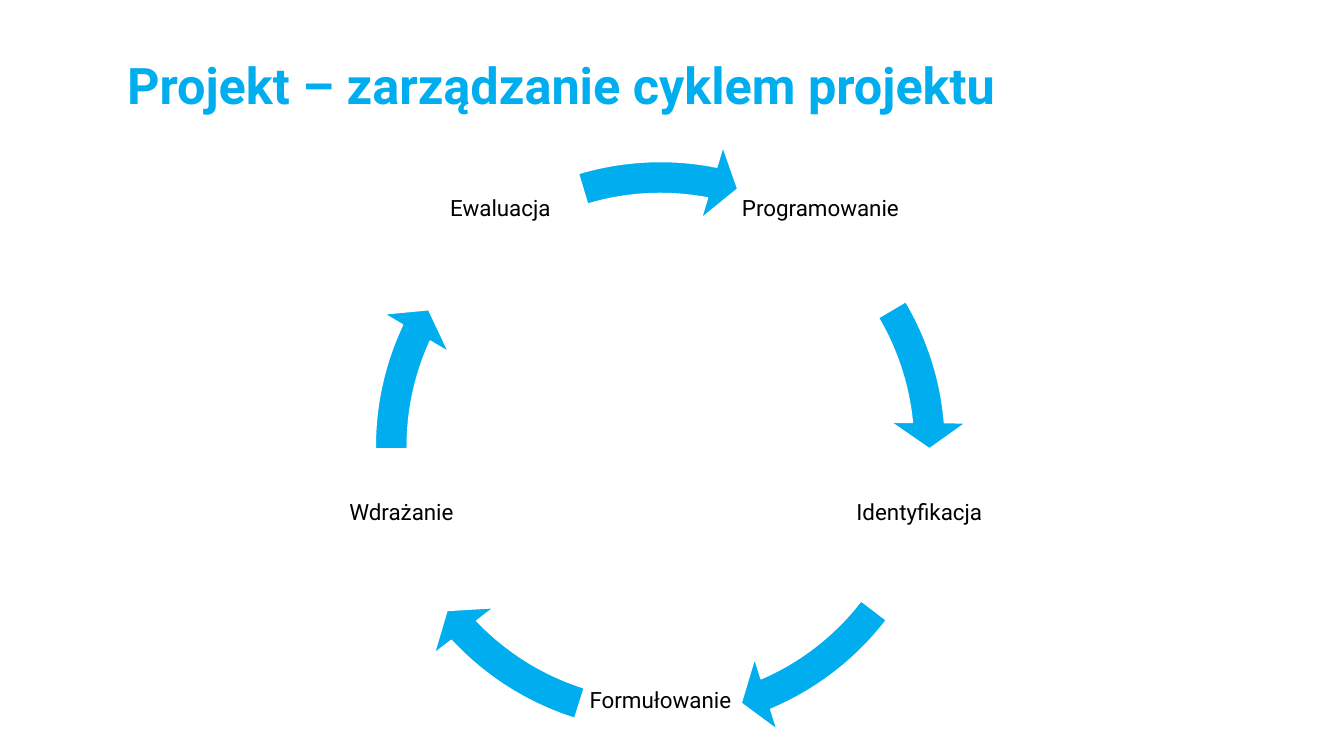
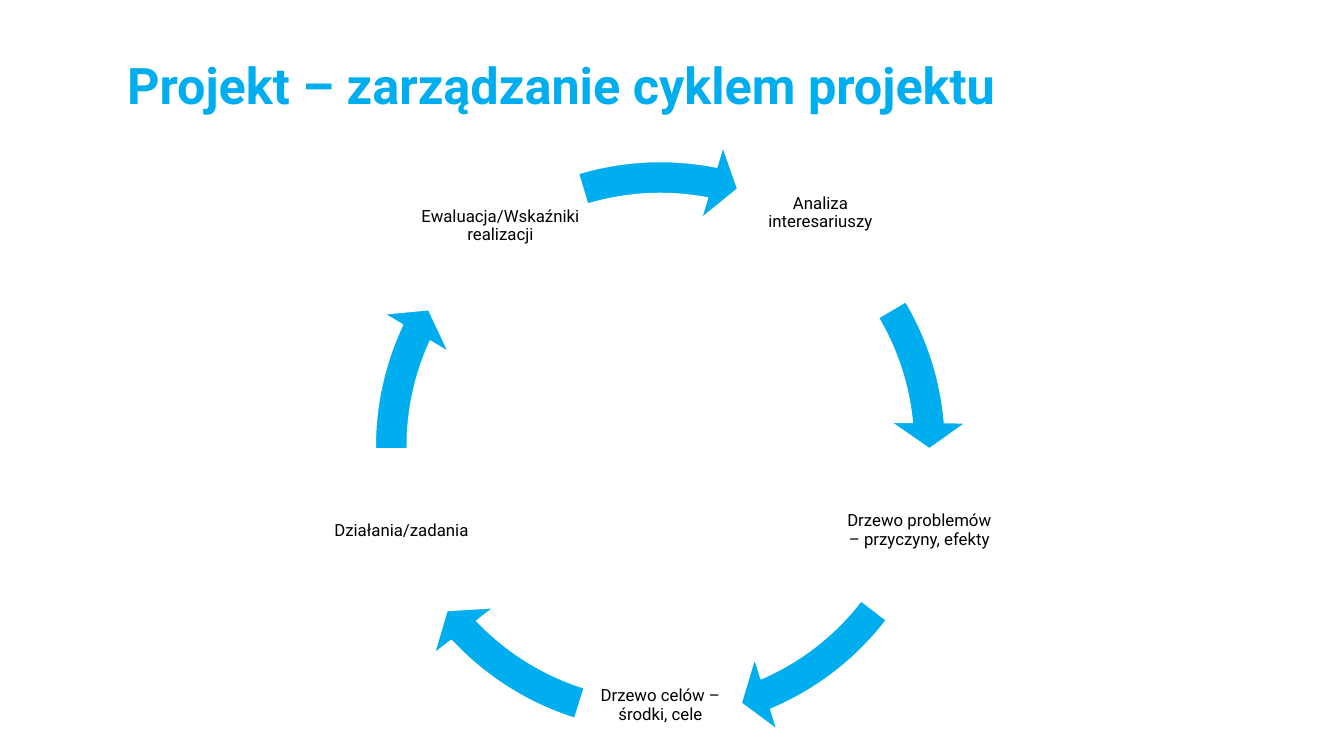
from math import cos, radians, sin

from pptx import Presentation
from pptx.dml.color import RGBColor
from pptx.enum.shapes import MSO_SHAPE
from pptx.enum.text import MSO_ANCHOR, MSO_AUTO_SIZE, PP_ALIGN
from pptx.util import Inches, Pt

COLORS = {"accent": "00AEEF", "text": "000000", "outline": "FFFFFF"}
FONT = "Roboto"
TITLE = "Projekt – zarządzanie cyklem projektu"

# The cycle: labels sit every 72 degrees on a circle, clockwise from top right
CENTER_X, CENTER_Y, RADIUS = 6.55, 4.43, 2.7
FIRST_ANGLE, STEP = -54, 72
LABEL_WIDTH, LABEL_HEIGHT, LABEL_INSET = 1.62, 0.7, 0.02
RING_SIZE = 6.08
BAND_PERCENT, HEAD_PERCENT, HEAD_ANGLE = 5.2, 6.1, 5.6

# Start and end angle of the arrow that follows each label
ARROWS = [(329.43, 354.89), (37.55, 66.92), (107.49, 136.85),
          (179.51, 204.97), (253.3, 281.1)]

# Font size, then each label with the distance it is raised above its point
CYCLES = [
    (16, [("Programowanie", 0.17), ("Identyfikacja", 0.17), ("Formułowanie", 0.17),
          ("Wdrażanie", 0.17), ("Ewaluacja", 0.17)]),
    (12, [("Analiza interesariuszy", 0.13), ("Drzewo problemów – przyczyny, efekty", 0),
          ("Drzewo celów – środki, cele", 0.13), ("Działania/zadania", 0),
          ("Ewaluacja/Wskaźniki realizacji", 0)]),
]


def write(shape, text, size, color, align, anchor, spacing, bold=False):
    frame = shape.text_frame
    frame.text = text
    frame.word_wrap = True
    frame.auto_size = MSO_AUTO_SIZE.NONE
    frame.vertical_anchor = anchor
    para = frame.paragraphs[0]
    para.alignment = align
    para.line_spacing = spacing
    para.space_before = Pt(0)
    font = para.runs[0].font
    font.name = FONT
    font.size = Pt(size)
    font.bold = bold
    font.color.rgb = RGBColor.from_string(COLORS[color])


def add_ring_arrow(slide, start, end):
    """Add a circular arrow spanning the given angles, in degrees clockwise from the right."""
    arrow = slide.shapes.add_shape(
        MSO_SHAPE.CIRCULAR_ARROW,
        Inches(CENTER_X - RING_SIZE / 2), Inches(CENTER_Y - RING_SIZE / 2),
        Inches(RING_SIZE), Inches(RING_SIZE))
    # Angles are stored in 60000ths of a degree, adjustments in 100000ths
    values = [BAND_PERCENT / 100, HEAD_ANGLE * 0.6, end * 0.6, start * 0.6, HEAD_PERCENT / 100]
    for index, value in enumerate(values):
        arrow.adjustments[index] = value
    arrow.shadow.inherit = False
    arrow.fill.solid()
    arrow.fill.fore_color.rgb = RGBColor.from_string(COLORS["accent"])
    arrow.line.color.rgb = RGBColor.from_string(COLORS["outline"])
    arrow.line.width = Pt(1)


deck = Presentation()
deck.slide_width = Inches(13.33)
deck.slide_height = Inches(7.5)
title_only = deck.slide_layouts[5]

for size, labels in CYCLES:
    slide = deck.slides.add_slide(title_only)
    title = slide.shapes.title
    title.left, title.top = Inches(1.16), Inches(0.58)
    title.width, title.height = Inches(9.5), Inches(0.6)
    write(title, TITLE, 36, "accent", PP_ALIGN.LEFT, MSO_ANCHOR.BOTTOM, 0.8, bold=True)

    for index, ((label, lift), (start, end)) in enumerate(zip(labels, ARROWS)):
        angle = radians(FIRST_ANGLE + index * STEP)
        x = CENTER_X + RADIUS * cos(angle)
        y = CENTER_Y + RADIUS * sin(angle) - lift
        box = slide.shapes.add_textbox(
            Inches(x - LABEL_WIDTH / 2), Inches(y - LABEL_HEIGHT / 2),
            Inches(LABEL_WIDTH), Inches(LABEL_HEIGHT))
        frame = box.text_frame
        frame.margin_left = frame.margin_right = Inches(LABEL_INSET)
        frame.margin_top = frame.margin_bottom = Inches(LABEL_INSET)
        write(box, label, size, "text", PP_ALIGN.CENTER, MSO_ANCHOR.MIDDLE, 0.9)
        add_ring_arrow(slide, start, end)

deck.save("out.pptx")
